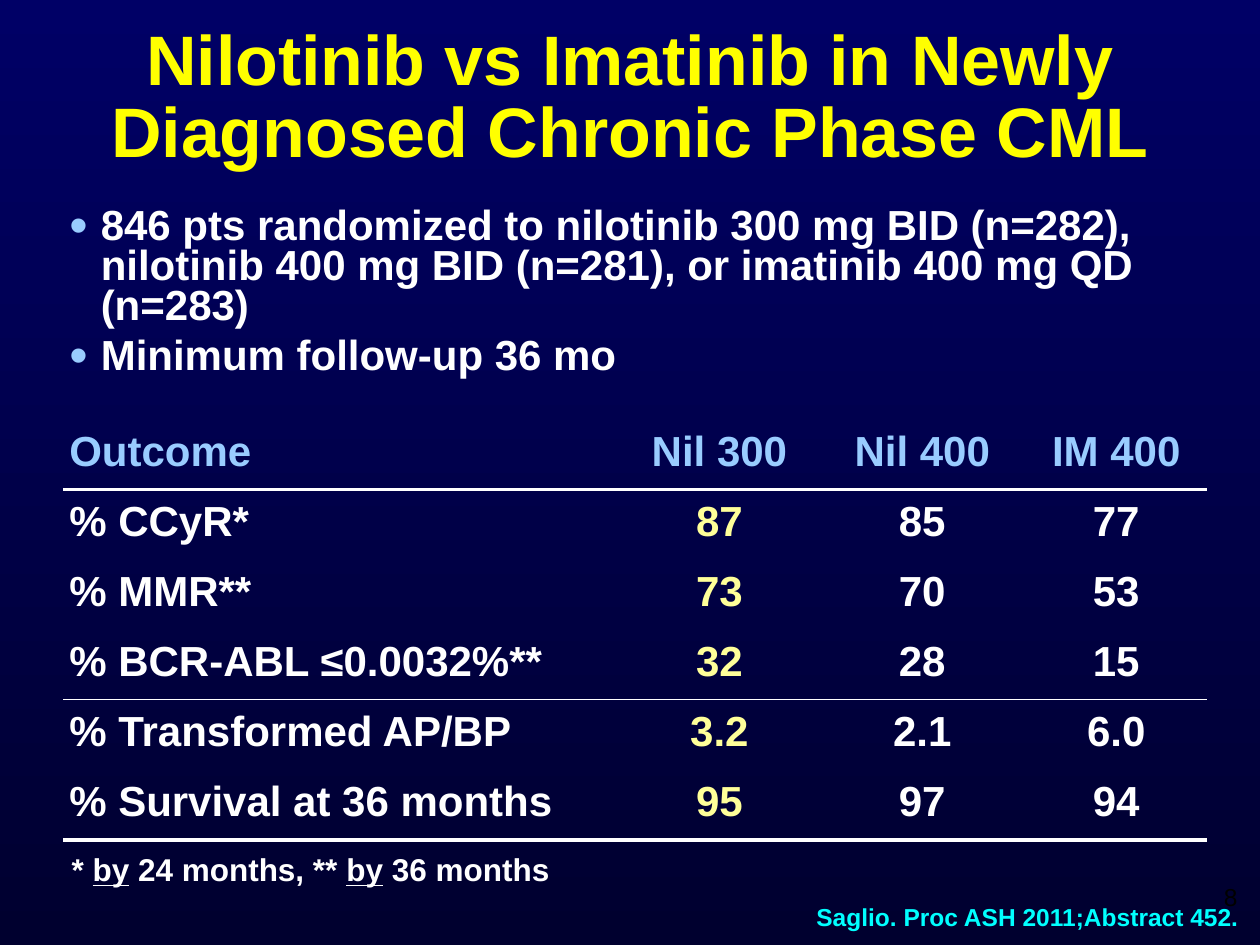
from dataclasses import dataclass

from lxml import etree
from pptx import Presentation
from pptx.dml.color import RGBColor
from pptx.enum.text import MSO_ANCHOR, MSO_AUTO_SIZE, PP_ALIGN
from pptx.oxml.ns import qn
from pptx.util import Inches, Pt

LEFT, MID, RIGHT = PP_ALIGN.LEFT, PP_ALIGN.CENTER, PP_ALIGN.RIGHT
TOP, CENTRE = MSO_ANCHOR.TOP, MSO_ANCHOR.MIDDLE
GROW, FIXED = MSO_AUTO_SIZE.SHAPE_TO_FIT_TEXT, MSO_AUTO_SIZE.NONE

WHITE, SKY, LEMON = "FFFFFF", "99CCFF", "FFFF99"
COLS, ROWS = 100, 75  # the slide's grid; one unit is 0.1 inch
WIDTHS = (44.2, 15.8, 16.4, 14.4)
INTRO, ROW = 20, 5.56
PAD = 0.5
RULES = {1: 2.25, 4: 1, 6: 2.25}  # table row -> weight of the line below it

POINTS = (
    "846 pts randomized to nilotinib 300 mg BID (n=282), "
    "nilotinib 400 mg BID (n=281), or imatinib 400 mg QD (n=283)",
    "Minimum follow-up 36 mo",
)
HEADS = ("Outcome", "Nil 300", "Nil 400", "IM 400")
DATA = (
    ("% CCyR*", "87", "85", "77"),
    ("% MMR**", "73", "70", "53"),
    ("% BCR-ABL ≤0.0032%**", "32", "28", "15"),
    ("% Transformed AP/BP", "3.2", "2.1", "6.0"),
    ("% Survival at 36 months", "95", "97", "94"),
)


@dataclass
class Box:
    col: float
    row: float
    wide: float
    high: float


def unit(n: float) -> int:
    return Inches(n / 10)


def paint(color: str) -> RGBColor:
    return RGBColor.from_string(color)


def write(frame, *paras: str, size=24, color=WHITE, bold=True, align=LEFT,
          lead=None, before=0) -> None:
    """Fill a text frame; parts between underscores are underlined."""
    for i, text in enumerate(paras):
        para = frame.add_paragraph() if i else frame.paragraphs[0]
        para.alignment = align
        para.space_before = Pt(before)
        if lead:
            para.line_spacing = lead
        for j, part in enumerate(text.split("_")):
            run = para.add_run()
            run.text = part
            font = run.font
            font.name, font.size, font.bold = "Arial", Pt(size), bold
            font.color.rgb = paint(color)
            if j % 2:
                font.underline = True


def label(slide, box: Box, text: str, wrap=True, fit=FIXED, anchor=TOP, **style) -> None:
    shape = slide.shapes.add_textbox(*map(unit, (box.col, box.row, box.wide, box.high)))
    frame = shape.text_frame
    frame.word_wrap, frame.auto_size, frame.vertical_anchor = wrap, fit, anchor
    write(frame, text, **style)


def bullet(para) -> None:
    props = para._p.get_or_add_pPr()
    props.set("marL", str(unit(2.5)))
    props.set("indent", str(unit(-2.5)))
    tint = etree.SubElement(props, qn("a:buClr"))
    etree.SubElement(tint, qn("a:srgbClr"), val=SKY)
    etree.SubElement(props, qn("a:buSzPct"), val="125000")
    etree.SubElement(props, qn("a:buFont"), typeface="Arial")
    etree.SubElement(props, qn("a:buChar"), char="•")


def border(cell, above: float, below: float) -> None:
    """Rule the top and bottom of a cell; a weight of 0 draws nothing."""
    props = cell._tc.get_or_add_tcPr()
    for side, weight in (("L", 0), ("R", 0), ("T", above), ("B", below)):
        line = etree.SubElement(props, qn(f"a:ln{side}"), w=str(Pt(weight)))
        if weight:
            fill = etree.SubElement(line, qn("a:solidFill"))
            etree.SubElement(fill, qn("a:srgbClr"), val=WHITE)
        else:
            etree.SubElement(line, qn("a:noFill"))


def style_cell(cell, row: int) -> None:
    border(cell, RULES.get(row - 1, 0), RULES.get(row, 0))
    cell.fill.background()
    cell.vertical_anchor = CENTRE
    cell.margin_left = cell.margin_right = unit(PAD)
    cell.margin_top = cell.margin_bottom = unit(PAD)


def results(slide, box: Box) -> None:
    lines = (HEADS, *DATA)
    frame = slide.shapes.add_table(len(lines) + 1, len(HEADS),
                                   *map(unit, (box.col, box.row, box.wide, box.high)))
    table = frame.table
    table.first_row = table.horz_banding = False
    for col, wide in zip(table.columns, WIDTHS):
        col.width = unit(wide)
    for r, row in enumerate(table.rows):
        row.height = unit(ROW if r else INTRO)
        for cell in row.cells:
            style_cell(cell, r)

    intro = table.cell(0, 0)
    intro.merge(table.cell(0, len(HEADS) - 1))
    write(intro.text_frame, *POINTS, lead=0.85, before=6)
    for para in intro.text_frame.paragraphs:
        bullet(para)

    for r, line in enumerate(lines, 1):
        for c, text in enumerate(line):
            color = SKY if r == 1 else LEMON if c == 1 else WHITE
            write(table.cell(r, c).text_frame, text, color=color,
                  align=MID if c else LEFT, lead=0.85, before=6)


def backdrop(slide) -> None:
    fill = slide.background.fill
    fill.gradient()
    fill.gradient_angle = 270
    for stop, color, place in zip(fill.gradient_stops, ("000066", "00002F"), (0, 1)):
        stop.color.rgb = paint(color)
        stop.position = place


def main() -> None:
    deck = Presentation()
    deck.slide_width, deck.slide_height = unit(COLS), unit(ROWS)
    slide = deck.slides.add_slide(deck.slide_layouts[6])
    backdrop(slide)
    label(slide, Box(7.5, 1.7, 85, 12.5),
          "Nilotinib vs Imatinib in Newly Diagnosed Chronic Phase CML",
          anchor=CENTRE, size=40, color="FFFF00", align=MID, lead=0.85)
    results(slide, Box(5, 13.3, sum(WIDTHS), INTRO + ROW * (len(DATA) + 1)))
    label(slide, Box(63.5, 71.1, 35.8, 3.4), "Saglio. Proc ASH 2011;Abstract 452.",
          wrap=False, fit=GROW, size=14, color="00FFFF", align=RIGHT)
    label(slide, Box(4.7, 67, 40.3, 4), "* _by_ 24 months, ** _by_ 36 months",
          wrap=False, fit=GROW, size=18)
    label(slide, Box(71.7, 69.5, 27.5, 5.2), "8",
          size=14, color="000000", bold=False, align=RIGHT)
    deck.save("out.pptx")


if __name__ == "__main__":
    main()
